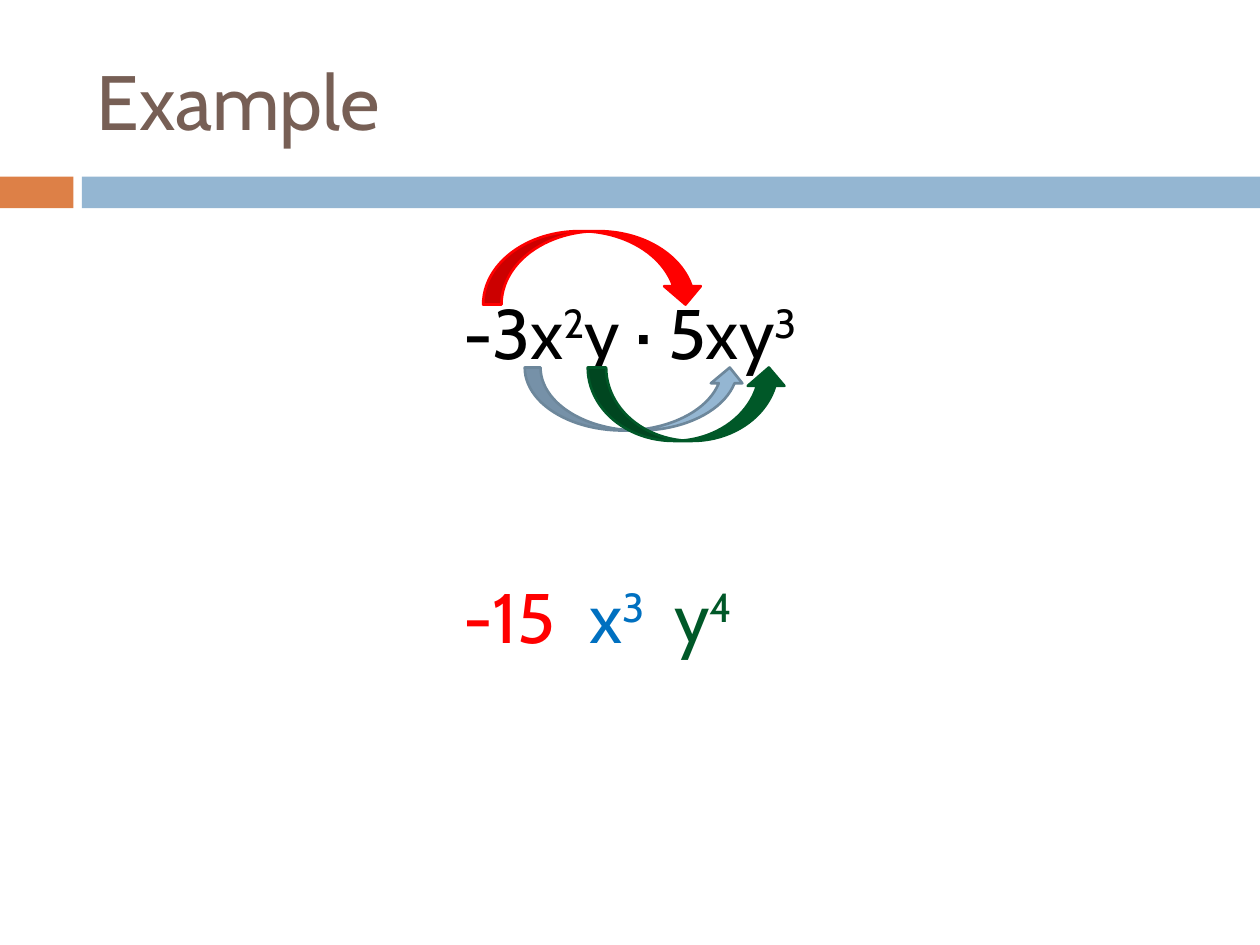
from pptx import Presentation
from pptx.dml.color import RGBColor
from pptx.enum.shapes import MSO_SHAPE
from pptx.enum.text import MSO_ANCHOR, MSO_AUTO_SIZE, PP_ALIGN
from pptx.util import Cm, Pt

RECTANGLE = MSO_SHAPE.RECTANGLE
CURVED_DOWN = MSO_SHAPE.CURVED_DOWN_ARROW
CURVED_UP = MSO_SHAPE.CURVED_UP_ARROW
MIDDLE = MSO_ANCHOR.MIDDLE
GROW = MSO_AUTO_SIZE.SHAPE_TO_FIT_TEXT
LEFT, CENTER = PP_ALIGN.LEFT, PP_ALIGN.CENTER

RED, BLUE, GREEN = "FF0000", "94B6D2", "005828"

deck = Presentation()
deck.slide_width, deck.slide_height = Cm(25.4), Cm(19.05)
page = deck.slides.add_slide(deck.slide_layouts[6])


def add_figure(kind, place, fill, line=None):
    figure = page.shapes.add_shape(kind, *map(Cm, place))
    figure.shadow.inherit = False
    figure.fill.solid()
    figure.fill.fore_color.rgb = RGBColor.from_string(fill)
    if line:
        figure.line.color.rgb = RGBColor.from_string(line)
        figure.line.width = Pt(1.5)
    else:
        figure.line.fill.background()


def add_text(place, pieces, color, size=40, align=LEFT, wrap=True):
    """Add one line of text; every second piece is a superscript."""
    box = page.shapes.add_textbox(*map(Cm, place))
    box.text_frame.word_wrap = wrap
    para = box.text_frame.paragraphs[0]
    para.alignment = align
    for index, piece in enumerate(pieces):
        span = para.add_run()
        span.text = piece
        span.font.name = "Cabin"
        span.font.size = Pt(size)
        span.font.color.rgb = RGBColor.from_string(color)
        if index % 2:
            span.font._element.set("baseline", "30000")
    return box.text_frame


# Title and the band below it
add_figure(RECTANGLE, (0, 3.56, 1.48, 0.64), "DD8047")
add_figure(RECTANGLE, (1.65, 3.56, 23.75, 0.64), BLUE)
title = add_text((1.7, 0.64, 22.66, 2.74), ["Example"], "775F55", size=44)
title.vertical_anchor = MIDDLE

# Product, with arrows joining the factors that belong together
product = add_text((0, 5.72, 25.4, 1.96), ["-3x", "2", "y · 5xy", "3"], "000000", align=CENTER)
product.auto_size = GROW
arrows = [
    (CURVED_DOWN, (9.74, 4.66, 4.45, 1.48), RED, RED),
    (CURVED_UP, (10.58, 7.41, 4.45, 1.27), BLUE, "6D879B"),
    (CURVED_UP, (11.85, 7.41, 4.02, 1.48), GREEN, GREEN),
]
for arrow in arrows:
    add_figure(*arrow)

# Result, one box for each factor
factors = [
    (9.1, 2.57, ["-15"], RED),
    (11.64, 1.75, ["x", "3"], "0070C0"),
    (13.34, 1.75, ["y", "4"], GREEN),
]
for left, width, pieces, color in factors:
    factor = add_text((left, 11.43, width, 1.96), pieces, color, wrap=False)
    factor.auto_size = GROW

deck.save("out.pptx")
